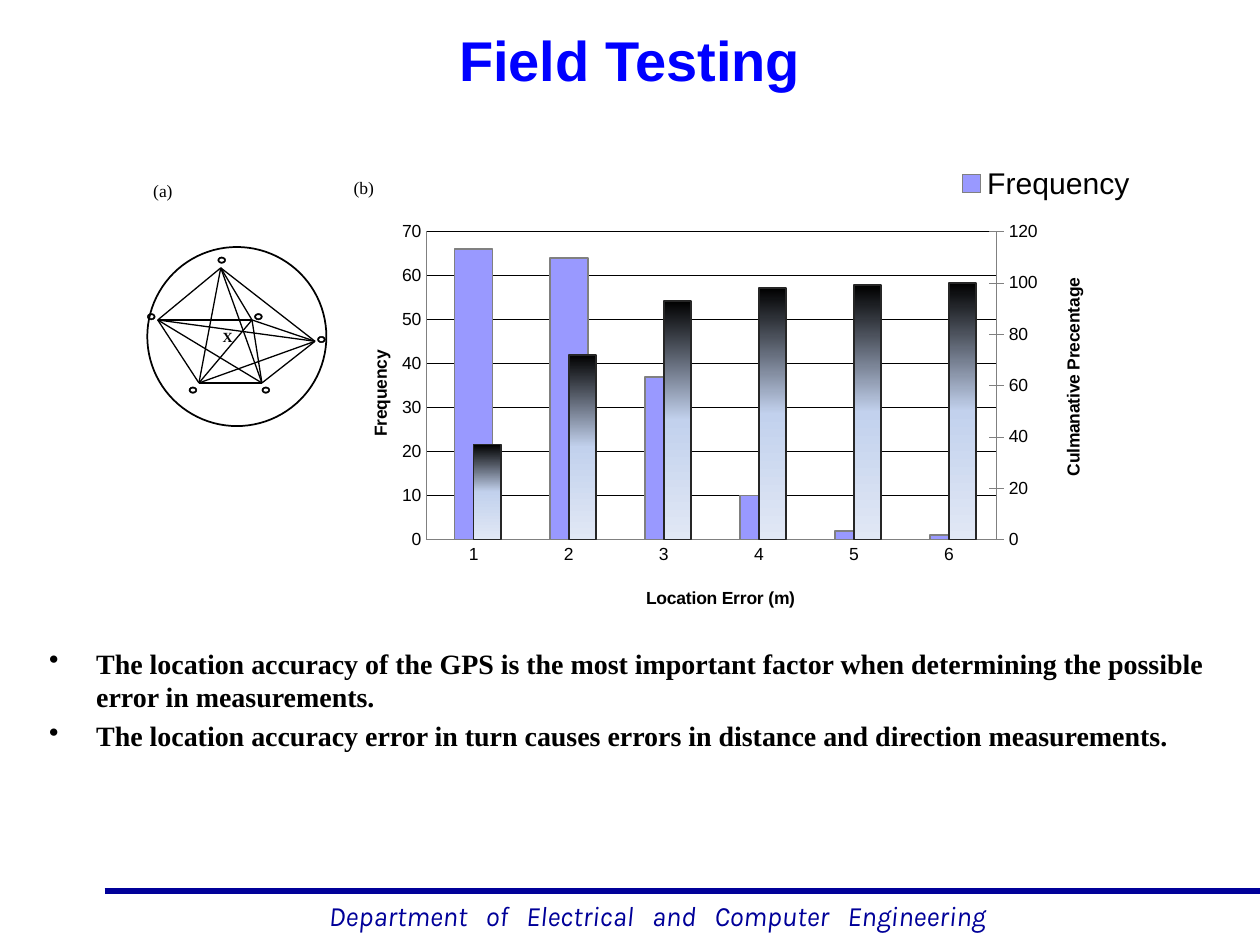
from copy import deepcopy
from itertools import combinations

from lxml import etree
from pptx import Presentation
from pptx import util as u
from pptx.chart.data import CategoryChartData
from pptx.dml.color import RGBColor
from pptx.enum import chart as ch
from pptx.enum import shapes, text
from pptx.oxml.ns import qn

HUES = {
    "ink": "000000", "navy": "000099", "blue": "0000FF", "white": "FFFFFF",
    "bar": "9999FF", "gray": "808080", "edge": "262626",
    "mid": "C2D1ED", "pale": "E1E8F5",
}
SERIF, SANS = "Times New Roman", "Arial"


def hue(name):
    return RGBColor.from_string(HUES[name])


def sub(node, tag, **attrs):
    return etree.SubElement(node, qn(tag), attrs)


def pen(line, name, width):
    line.color.rgb = hue(name)
    line.width = u.Pt(width)


def place(node, index, inner=False, **spots):
    """Give a chart part a manual layout as fractions of the chart."""
    for old in node.findall(qn("c:layout")):
        node.remove(old)
    box = etree.Element(qn("c:layout"))
    man = sub(box, "c:manualLayout")
    if inner:
        sub(man, "c:layoutTarget", val="inner")
    for key in ("xMode", "yMode"):
        sub(man, "c:" + key, val="edge")
    for key, val in spots.items():
        sub(man, "c:" + key, val=str(val))
    node.insert(index, box)


class Deck:
    def __init__(self):
        self.file = Presentation()
        self.file.slide_width, self.file.slide_height = u.Cm(25.4), u.Cm(19.05)
        self.slide = self.file.slides.add_slide(self.file.slide_layouts[5])
        self.home = self.slide.shapes

    def run(self, para, words, size, font=SERIF, color="ink", bold=False, slant=False):
        run = para.add_run()
        run.text = words
        run.font.size, run.font.name = u.Pt(size), font
        run.font.bold, run.font.italic = bold, slant
        run.font.color.rgb = hue(color)
        return run

    def title(self, words, *box):
        head = self.home.title
        head.left, head.top, head.width, head.height = map(u.Cm, box)
        frame = head.text_frame
        frame.auto_size = text.MSO_AUTO_SIZE.NONE
        frame.vertical_anchor = text.MSO_ANCHOR.MIDDLE
        para = frame.paragraphs[0]
        para.alignment = text.PP_ALIGN.CENTER
        self.run(para, words, 32, SANS, "blue", True)

    def text(self, *box):
        frame = self.home.add_textbox(*map(u.Cm, box)).text_frame
        frame.word_wrap = True
        return frame

    def label(self, words, box, size=10, bold=False):
        self.run(self.text(*box).paragraphs[0], words, size, bold=bold)

    def list(self, items, *box):
        frame = self.text(*box)
        for i, item in enumerate(items):
            para = frame.add_paragraph() if i else frame.paragraphs[0]
            props = para._p.get_or_add_pPr()
            props.set("marL", str(u.Cm(0.95)))
            props.set("indent", str(u.Cm(-0.95)))
            sub(props, "a:buChar", char="•")
            if i:
                para.space_before = u.Pt(3.2)
            self.run(para, item, 16, bold=True)

    def line(self, start, end, color="ink", width=0.75):
        link = self.home.add_connector(
            shapes.MSO_CONNECTOR.STRAIGHT, *map(u.Cm, (*start, *end)))
        pen(link.line, color, width)
        sub(link._element.spPr, "a:effectLst")

    def shape(self, kind, box, fill, width):
        item = self.home.add_shape(kind, *map(u.Cm, box))
        item.shadow.inherit = False
        item.fill.solid()
        item.fill.fore_color.rgb = hue(fill)
        pen(item.line, "ink", width)
        return item

    def axis(self, axis, words, x, y, turn):
        axis.major_tick_mark = ch.XL_TICK_MARK.NONE
        axis.minor_tick_mark = ch.XL_TICK_MARK.NONE
        font = axis.tick_labels.font
        font.size, font.name = u.Pt(10), SANS
        font.color.rgb = hue("ink")
        pen(axis.format.line, "gray", 0.25)
        frame = axis.axis_title.text_frame
        self.run(frame.paragraphs[0], words, 10, SANS, bold=True)
        frame._txBody.bodyPr.set("rot", str(turn))
        frame._txBody.bodyPr.set("vert", "horz")
        place(axis.axis_title._element, 1, x=x, y=y)

    def chart(self, cats, sets, *box):
        data = CategoryChartData()
        data.categories = cats
        for name, vals in sets:
            data.add_series(name, vals)
        chart = self.home.add_chart(
            ch.XL_CHART_TYPE.COLUMN_CLUSTERED, *map(u.Cm, box), data).chart
        chart.has_title = False
        chart.font.size, chart.font.name = u.Pt(17.2), SANS
        chart.font.color.rgb = hue("ink")
        chart.plots[0].gap_width, chart.plots[0].overlap = 150, 0
        chart.plots[0].vary_by_categories = False
        return chart


def right_axis(chart, words, top, step, x, y):
    """Move all series but the first to a second pair of axes."""
    area = chart._chartSpace.find(".//" + qn("c:plotArea"))
    bars = area.find(qn("c:barChart"))
    extra = deepcopy(bars)
    bars.addnext(extra)
    for ser in bars.findall(qn("c:ser"))[1:]:
        bars.remove(ser)
    extra.remove(extra.find(qn("c:ser")))

    cat, val = (deepcopy(area.find(qn(tag))) for tag in ("c:catAx", "c:valAx"))
    ids = ("50010", "50020")
    for ref, key in zip(extra.findall(qn("c:axId")), ids):
        ref.set("val", key)
    for axis, key, cross in ((cat, *ids), (val, *ids[::-1])):
        axis.find(qn("c:axId")).set("val", key)
        axis.find(qn("c:crossAx")).set("val", cross)
    cat.find(qn("c:delete")).set("val", "1")
    cat.remove(cat.find(qn("c:title")))
    val.remove(val.find(qn("c:majorGridlines")))
    for tag, new in (("axPos", "r"), ("crosses", "max"), ("majorTickMark", "cross"),
                     ("scaling/c:max", top), ("majorUnit", step)):
        val.find("c:" + tag, val.nsmap).set("val", str(new))
    val.find(".//" + qn("a:t")).text = words
    place(val.find(qn("c:title")), 1, x=x, y=y)
    area.findall(qn("c:valAx"))[-1].addnext(val)
    val.addnext(cat)


def fade(series, stops):
    props = series._element.find(qn("c:spPr"))
    grad = etree.Element(qn("a:gradFill"), rotWithShape="1")
    steps = sub(grad, "a:gsLst")
    for pos, name in stops:
        sub(sub(steps, "a:gs", pos=str(pos * 1000)), "a:srgbClr", val=HUES[name])
    sub(grad, "a:lin", ang="5400000", scaled="0")
    props.insert(0, grad)


def main():
    deck = Deck()

    # Footer rule and department name, with wide word gaps
    deck.line((2.11, 17.96), (25.4, 17.96), "navy", 3)
    foot = deck.text(6.38, 17.98, 14.53, 0.94).paragraphs[0]
    for i, word in enumerate("Department of Electrical and Computer Engineering".split()):
        if i:
            gap = deck.run(foot, " ", 16, "Karla", "navy", slant=True)
            gap._r.get_or_add_rPr().set("spc", "700")
        deck.run(foot, word, 16, "Karla", "navy", slant=True)

    # Title and findings
    deck.title("Field Testing", 1.27, 0.3, 22.86, 1.78)
    deck.list([
        "The location accuracy of the GPS is the most important factor when "
        "determining the possible error in measurements.",
        "The location accuracy error in turn causes errors in distance and "
        "direction measurements.",
    ], 0.74, 12.9, 23.93, 6.1)

    # Network of nodes: every pair of points is joined
    points = [(4.45, 5.4), (3.18, 6.45), (6.35, 6.88),
              (4.01, 7.72), (5.28, 7.72), (5.08, 6.45)]
    rings = [(4.39, 5.18), (2.97, 6.32), (6.4, 6.78),
             (3.81, 7.8), (5.28, 7.8), (5.13, 6.32)]
    deck.home = deck.slide.shapes.add_group_shape().shapes
    deck.shape(shapes.MSO_SHAPE.OVAL, (2.97, 4.98, 3.61, 3.61), "white", 1)
    for start, end in combinations(points, 2):
        deck.line(start, end)
    for spot in rings:
        ring = deck.shape(shapes.MSO_SHAPE.DONUT, (*spot, 0.16, 0.13), "ink", 0.25)
        ring.adjustments[0] = 0.2
    deck.label("X", (4.24, 6.5, 0.84, 0.61), 8, True)
    deck.home = deck.slide.shapes

    # Error chart with a second value axis
    chart = deck.chart(["1", "2", "3", "4", "5", "6"], [
        ("Frequency", (66, 64, 37, 10, 2, 1)),
        ("Series 2", (37, 36, 21, 6, 1, 1)),
        ("Culmantive Precentage", (37, 72, 93, 98, 99, 100)),
    ], 6.88, 2.64, 16.43, 9.73)
    count, blank, share = chart.plots[0].series
    count.format.fill.solid()
    count.format.fill.fore_color.rgb = hue("bar")
    pen(count.format.line, "gray", 1)
    blank.format.fill.background()
    blank.format.line.fill.background()
    pen(share.format.line, "edge", 1)
    fade(share, [(0, "ink"), (50, "mid"), (100, "pale")])

    deck.axis(chart.category_axis, "Location Error (m)", 0.37, 0.94, 0)
    val = chart.value_axis
    val.minimum_scale, val.maximum_scale, val.major_unit = 0, 70, 10
    pen(val.major_gridlines.format.line, "ink", 0.25)
    deck.axis(val, "Frequency", 0.03, 0.45, -5400000)
    right_axis(chart, "Culmanative Precentage", 120, 20, 0.88, 0.3)
    place(chart._chartSpace.find(".//" + qn("c:plotArea")), 0, True,
          x=0.104, y=0.209, w=0.7, h=0.64)

    # Legend for the first series only
    chart.has_legend = True
    chart.legend.position = ch.XL_LEGEND_POSITION.RIGHT
    chart.legend.include_in_layout = False
    key = chart.legend._element
    for i in (1, 2):
        entry = etree.Element(qn("c:legendEntry"))
        sub(entry, "c:idx", val=str(i))
        sub(entry, "c:delete", val="1")
        key.insert(i, entry)
    place(key, 3, x=0.75, y=0.06, w=0.23, h=0.1)

    # Panel labels
    deck.label("(a)", (2.84, 3.51, 1.07, 0.69))
    deck.label("(b)", (6.88, 3.45, 1.07, 0.69))

    deck.file.save("out.pptx")


if __name__ == "__main__":
    main()
